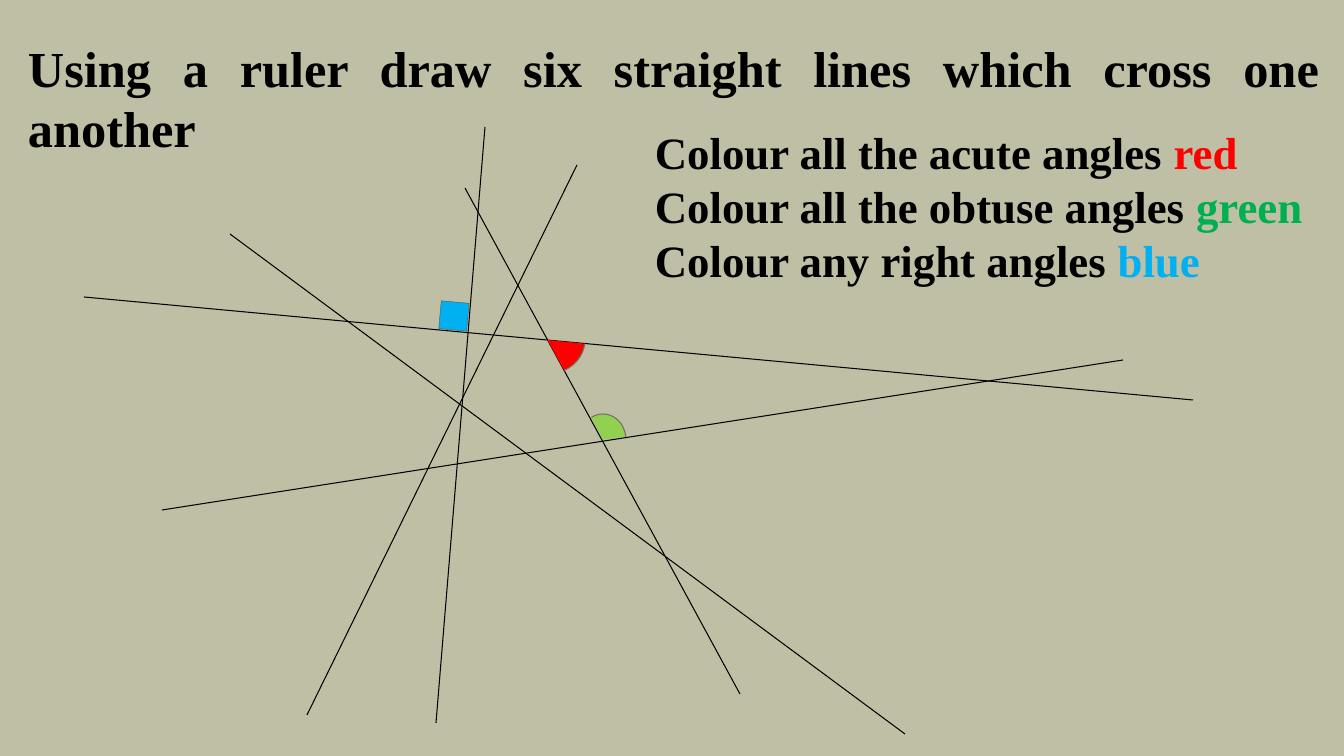
"""Build the slide on crossing lines and the angles between them."""
from lxml import etree
from pptx import Presentation
from pptx.dml.color import RGBColor
from pptx.enum.shapes import MSO_CONNECTOR, MSO_SHAPE
from pptx.enum.text import MSO_AUTO_SIZE, PP_ALIGN
from pptx.oxml.ns import qn
from pptx.util import Pt

STRAIGHT = MSO_CONNECTOR.STRAIGHT
ARC, SQUARE = MSO_SHAPE.ARC, MSO_SHAPE.RECTANGLE
GROW = MSO_AUTO_SIZE.SHAPE_TO_FIT_TEXT
LEFT, JUSTIFY = PP_ALIGN.LEFT, PP_ALIGN.JUSTIFY

COLOURS = {
    "background": "BFBFA5", "black": "000000",
    "red": "FF0000", "green": "00B050", "blue": "00B0F0",
    "light green": "92D050", "arc edge": "6F6F6F", "square edge": "525252",
}
SLIDE_SIZE = (1344, 756)
EMU_PER_PX = 914400 / 100.8
ARC_UNITS_PER_DEGREE = 0.6

TASK = [[("Using a ruler draw six straight lines which cross one another", "black")]]
COLOURING_RULES = [
    [("Colour all the acute angles ", "black"), ("red", "red")],
    [("Colour all the obtuse angles ", "black"), ("green", "green")],
    [("Colour any right angles ", "black"), ("blue", "blue")],
]
TEXTS = [
    (TASK, (18, 32, 1312, 72), 36, JUSTIFY, True),
    (COLOURING_RULES, (645, 120, 671, 173), 32, LEFT, False),
]
CROSSING_LINES = [
    (230, 234, 905, 734),
    (577, 165, 307, 715),
    (485, 127, 436, 723),
    (465, 188, 740, 694),
    (162, 510, 1123, 360),
    (84, 297, 1193, 400),
]
ANGLE_MARKS = [
    (ARC, (580, 414, 46, 51), (242.3, 352.7), 0, "light green", "arc edge", 0.75),
    (ARC, (510, 306, 75, 68), (5.7, 61.3), 0, "red", "arc edge", 0.75),
    (SQUARE, (440, 302, 28, 28), (), 5.1, "blue", "square edge", 0.25),
]


def emu(lengths):
    return [round(length * EMU_PER_PX) for length in lengths]


def colour(name):
    return RGBColor.from_string(COLOURS[name])


def paint(fill, name):
    fill.solid()
    fill.fore_color.rgb = colour(name)


def draw_edge(line, name, width):
    line.color.rgb = colour(name)
    line.width = Pt(width)


def add_text(slide, paragraphs, box, size, alignment, wrap):
    frame = slide.shapes.add_textbox(*emu(box)).text_frame
    frame.word_wrap = wrap
    frame.auto_size = GROW
    font_format = {"name": "Times New Roman", "size": Pt(size), "bold": True}
    for index, pieces in enumerate(paragraphs):
        paragraph = frame.add_paragraph() if index else frame.paragraphs[0]
        paragraph.alignment = alignment
        for words, name in pieces:
            run = paragraph.add_run()
            run.text = words
            for attribute, value in font_format.items():
                setattr(run.font, attribute, value)
            run.font.color.rgb = colour(name)


def add_crossing_line(slide, ends):
    connector = slide.shapes.add_connector(STRAIGHT, *emu(ends))
    draw_edge(connector.line, "black", 0.75)
    etree.SubElement(connector._element.spPr, qn("a:effectLst"))


def add_angle_mark(slide, kind, box, degrees, rotation, fill, edge, width):
    mark = slide.shapes.add_shape(kind, *emu(box))
    mark.shadow.inherit = False
    mark.rotation = rotation
    for index, angle in enumerate(degrees):
        mark.adjustments[index] = angle * ARC_UNITS_PER_DEGREE
    paint(mark.fill, fill)
    draw_edge(mark.line, edge, width)


def main():
    deck = Presentation()
    deck.slide_width, deck.slide_height = emu(SLIDE_SIZE)
    slide = deck.slides.add_slide(deck.slide_layouts[6])
    paint(slide.background.fill, "background")
    for ends in CROSSING_LINES:
        add_crossing_line(slide, ends)
    for text in TEXTS:
        add_text(slide, *text)
    for mark in ANGLE_MARKS:
        add_angle_mark(slide, *mark)
    deck.save("out.pptx")


if __name__ == "__main__":
    main()
